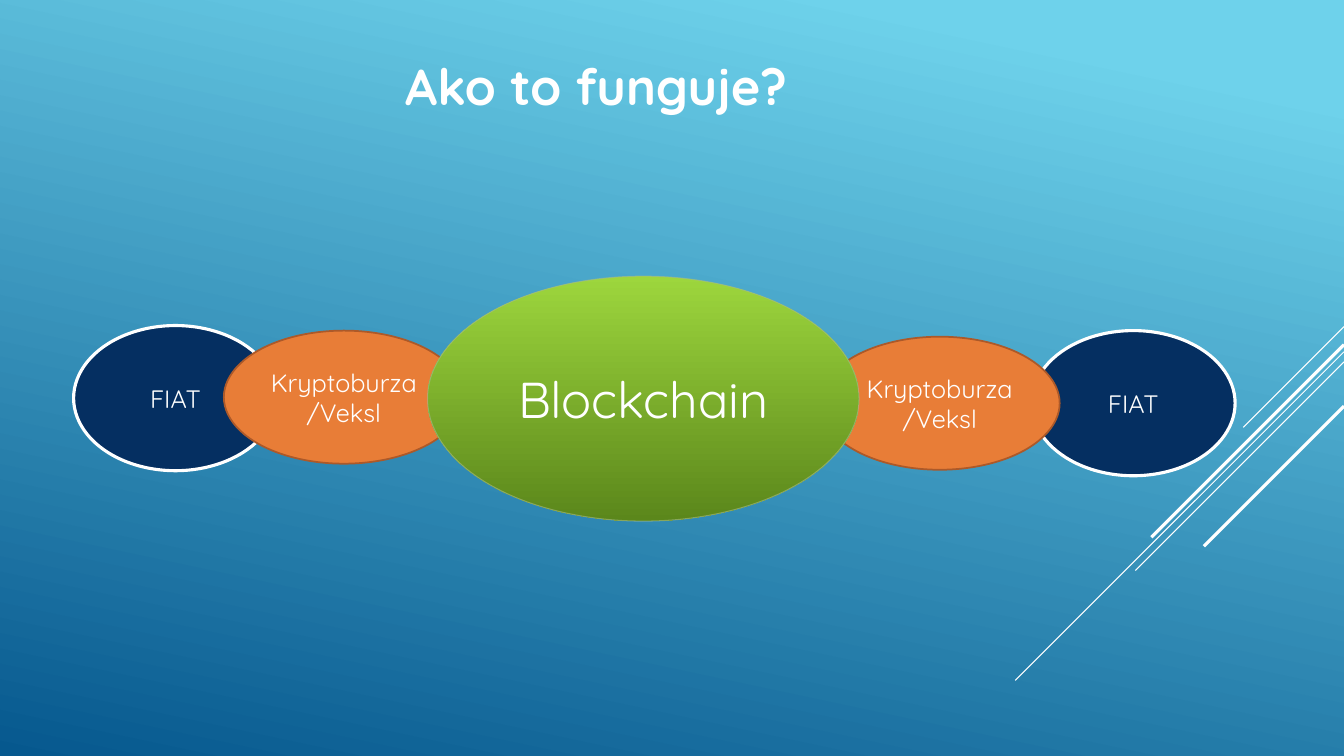
from lxml import etree
from pptx import Presentation
from pptx.dml.color import RGBColor
from pptx.enum.shapes import MSO_CONNECTOR, MSO_SHAPE
from pptx.enum.text import MSO_ANCHOR, PP_ALIGN
from pptx.oxml.ns import qn
from pptx.util import Inches, Pt

OVAL = MSO_SHAPE.OVAL
STRAIGHT = MSO_CONNECTOR.STRAIGHT
MIDDLE = MSO_ANCHOR.MIDDLE
CENTER = PP_ALIGN.CENTER

WHITE = RGBColor(0xFF, 0xFF, 0xFF)
SKY = RGBColor(0x6E, 0xD2, 0xEB)
OCEAN = RGBColor(0x06, 0x58, 0x8E)
NAVY = RGBColor(0x05, 0x2F, 0x61)
ORANGE = RGBColor(0xE8, 0x7D, 0x37)
RUST = RGBColor(0xAC, 0x59, 0x29)
LIME = RGBColor(0x9D, 0xD6, 0x3D)
MOSS = RGBColor(0x5B, 0x87, 0x1B)
SAGE = RGBColor(0xA4, 0xBB, 0x8B)
FONT = "Quicksand"
WIDTH, HEIGHT = 13.33, 7.5


def blend(fill, stops, angle):
    """Give a fill a two-stop gradient running clockwise by angle."""
    fill.gradient()
    fill.gradient_angle = 360 - angle
    for stop, (pos, color) in zip(fill.gradient_stops, stops):
        stop.position = pos
        stop.color.rgb = color


def style(para, size, bold=False):
    """Set the font of a paragraph."""
    font = para.font
    font.name, font.size, font.bold = FONT, Pt(size), bold
    font.color.rgb = WHITE


def rays(slide, right, top):
    """Draw diagonal rays falling leftward from the slide's right edge."""
    for drop, run, weight in (
        (0, 1, 0.75),
        (0.25, 3.26, 0.75),
        (0.35, 2.07, 0.75),
        (0.18, 1.91, 2.25),
        (0.79, 1.39, 2.25),
    ):
        y = top + drop
        ray = slide.shapes.add_connector(
            STRAIGHT, Inches(right), Inches(y), Inches(right - run), Inches(y + run)
        )
        ray.line.color.rgb = WHITE
        ray.line.width = Pt(weight)
        etree.SubElement(ray._element.spPr, qn("a:effectLst"))


def oval(slide, box, text, size, edge, weight):
    """Add a labelled oval with an outline and return it."""
    shape = slide.shapes.add_shape(OVAL, *map(Inches, box))
    shape.shadow.inherit = False
    shape.line.color.rgb = edge
    shape.line.width = Pt(weight)
    frame = shape.text_frame
    frame.word_wrap = True
    frame.vertical_anchor = MIDDLE
    para = frame.paragraphs[0]
    para.text = text
    para.alignment = CENTER
    style(para, size)
    return shape


def chain(slide, left, top):
    """Place the chain of overlapping ovals from its top left corner."""
    fiat = ("FIAT", 2.02, 1.44, NAVY, WHITE, 2.25)
    broker = ("Kryptoburza/Veksl", 2.38, 1.32, ORANGE, RUST, 1.25)
    for dx, dy, kind in (
        (0, 0.49, fiat),
        (1.49, 0.54, broker),
        (9.5, 0.54, fiat),
        (7.4, 0.6, broker),
    ):
        text, width, height, color, edge, weight = kind
        box = (left + dx, top + dy, width, height)
        link = oval(slide, box, text, 18, edge, weight)
        link.fill.solid()
        link.fill.fore_color.rgb = color

    core = oval(slide, (left + 3.51, top, 4.28, 2.43), "Blockchain", 36, SAGE, 0.75)
    blend(core.fill, ((0, LIME), (1, MOSS)), 90)
    tint = core._element.xpath(".//a:ln//a:srgbClr")[0]
    etree.SubElement(tint, qn("a:alpha"), val="60000")


def title(slide, box):
    """Write the slide title in its box."""
    frame = slide.shapes.add_textbox(*map(Inches, box)).text_frame
    frame.word_wrap = True
    para = frame.paragraphs[0]
    para.text = "Ako to funguje?"
    style(para, 36, True)


def main():
    """Build and save the slide."""
    deck = Presentation()
    deck.slide_width, deck.slide_height = Inches(WIDTH), Inches(HEIGHT)
    slide = deck.slides.add_slide(deck.slide_layouts[6])
    blend(slide.background.fill, ((0.1, SKY), (1, OCEAN)), 102)
    rays(slide, WIDTH, 3.24)
    chain(slide, 0.73, 2.74)
    title(slide, (3.92, 0.5, 7.55, 0.71))
    deck.save("out.pptx")


if __name__ == "__main__":
    main()
